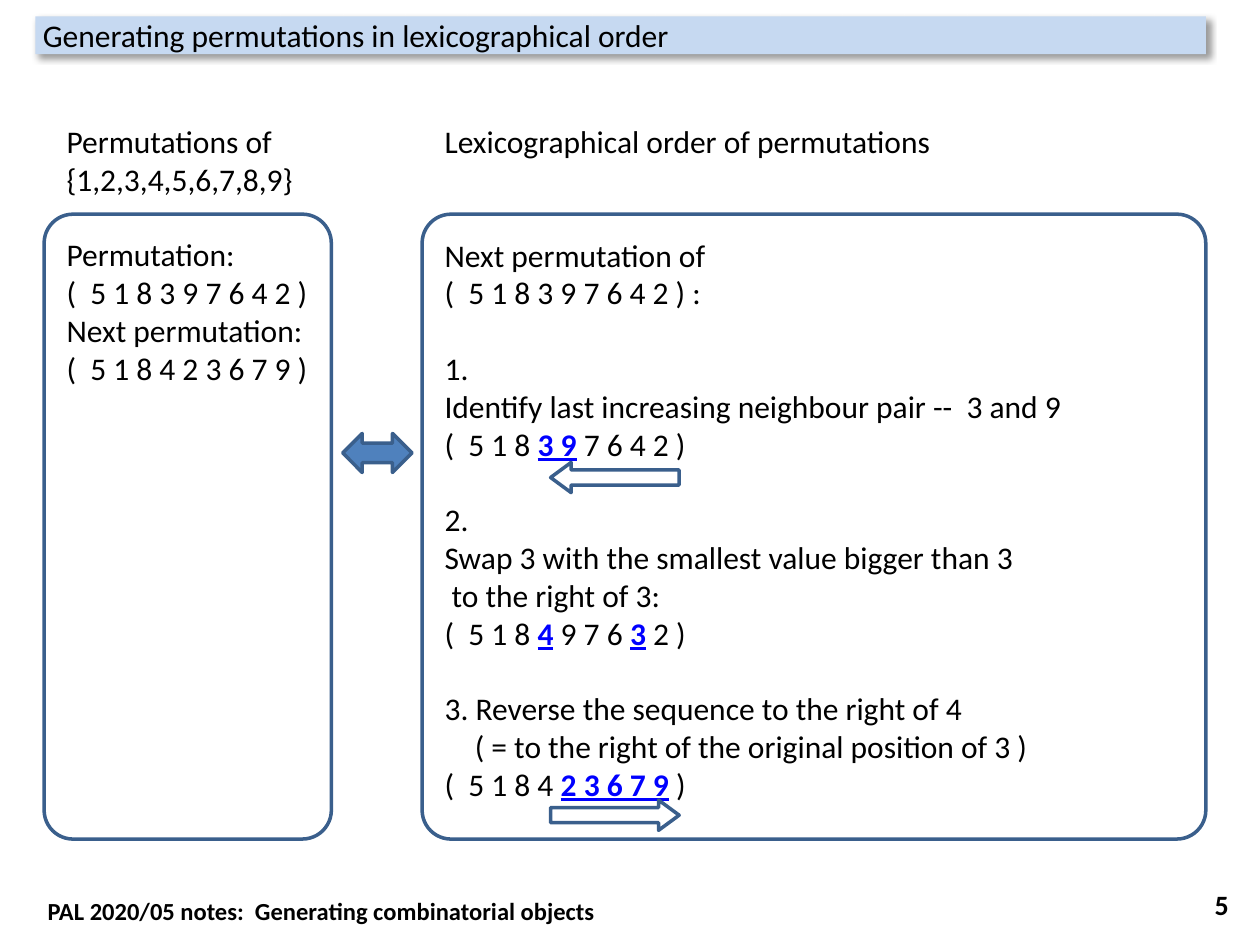
import dataclasses

import pptx
import pptx.dml.color
import pptx.enum.shapes
import pptx.enum.text
import pptx.oxml
import pptx.oxml.ns
import pptx.util

Inches = pptx.util.Inches
Pt = pptx.util.Pt
SHAPE = pptx.enum.shapes.MSO_SHAPE
ALIGN = pptx.enum.text.PP_ALIGN
ANCHOR = pptx.enum.text.MSO_ANCHOR


@dataclasses.dataclass(frozen=True)
class Theme:
    """Colours, font and sizes of the slide."""

    font: str = "Calibri"
    ink: str = "000000"
    mark: str = "0000FF"
    paper: str = "FFFFFF"
    bar: str = "C6D9F1"
    accent: str = "4F81BD"
    outline: str = "3A5F8C"
    body: int = 18
    number: int = 16
    footer: int = 14
    line_pitch: float = 21.6
    border: int = 2


THEME = Theme()


@dataclasses.dataclass(frozen=True)
class Line:
    """One paragraph: marked parts stand between underscores, gap counts lines above."""

    text: str
    gap: int = 0
    indent: float = 0


PERMUTATION_LINES = [
    Line("Permutations of {1,2,3,4,5,6,7,8,9}"),
    Line("Permutation:", gap=1),
    Line("(  5 1 8 3 9 7 6 4 2 )"),
    Line("Next permutation:"),
    Line("(  5 1 8 4 2 3 6 7 9 )"),
]
STEP_LINES = [
    Line("Lexicographical order of permutations"),
    Line("Next permutation of", gap=2),
    Line("(  5 1 8 3 9 7 6 4 2 ) :"),
    Line("1.", gap=1),
    Line("Identify last increasing neighbour pair --  3 and 9"),
    Line("(  5 1 8 _3 9_ 7 6 4 2 )"),
    Line("2.", gap=1),
    Line("Swap 3 with the smallest value bigger than 3"),
    Line(" to the right of 3:"),
    Line("(  5 1 8 _4_ 9 7 6 _3_ 2 )"),
    Line("3. Reverse the sequence to the right of 4", gap=1),
    Line("( = to the right of the original position of 3 )", indent=0.24),
    Line("(  5 1 8 4 _2 3 6 7 9_ )"),
]


def rgb(value):
    """Turn a hex string into a colour."""
    return pptx.dml.color.RGBColor.from_string(value)


def apply(target, values):
    """Set each named attribute on the target."""
    for name, value in values.items():
        setattr(target, name, value)


def write_line(paragraph, line, size, bold=False):
    """Fill a paragraph with the plain and marked runs of a line."""
    if line.gap:
        paragraph.space_before = Pt(line.gap * THEME.line_pitch)
    if line.indent:
        paragraph._p.get_or_add_pPr().set("marL", str(Inches(line.indent)))
    for position, part in enumerate(line.text.split("_")):
        marked = position % 2 == 1
        run = paragraph.add_run()
        run.text = part
        apply(run.font, {"name": THEME.font, "size": Pt(size),
                         "bold": bold or marked, "underline": marked})
        run.font.color.rgb = rgb(THEME.mark if marked else THEME.ink)


def add_text(slide, box, lines, size=THEME.body, bold=False,
             align=ALIGN.LEFT, anchor=ANCHOR.TOP):
    """Place a wrapping text box with the given lines."""
    frame = slide.shapes.add_textbox(*map(Inches, box)).text_frame
    apply(frame, {"word_wrap": True, "vertical_anchor": anchor})
    for position, line in enumerate(lines):
        paragraph = frame.add_paragraph() if position else frame.paragraphs[0]
        paragraph.alignment = align
        write_line(paragraph, line, size, bold)


def add_outlined(slide, kind, box, fill=THEME.paper, adjustments=()):
    """Place a filled preset shape with the common outline."""
    shape = slide.shapes.add_shape(kind, *map(Inches, box))
    shape.shadow.inherit = False
    shape.fill.solid()
    shape.fill.fore_color.rgb = rgb(fill)
    shape.line.color.rgb = rgb(THEME.outline)
    shape.line.width = Pt(THEME.border)
    for position, value in enumerate(adjustments):
        shape.adjustments[position] = value


def add_drop_shadow(shape):
    """Give a shape a soft shadow to the lower right."""
    shape.shadow.inherit = False
    effects = shape._element.spPr.find(pptx.oxml.ns.qn("a:effectLst"))
    effects.append(pptx.oxml.parse_xml(
        f'<a:outerShdw {pptx.oxml.ns.nsdecls("a")} blurRad="{Pt(4)}" dist="{Pt(3)}" '
        f'dir="{45 * 60000}" algn="tl" rotWithShape="0">'
        f'<a:srgbClr val="{THEME.ink}"><a:alpha val="40000"/></a:srgbClr></a:outerShdw>'))


def add_title(slide, box, text):
    """Place the shadowed title bar."""
    bar = slide.shapes.add_shape(SHAPE.RECTANGLE, *map(Inches, box))
    add_drop_shadow(bar)
    bar.fill.solid()
    bar.fill.fore_color.rgb = rgb(THEME.bar)
    bar.line.fill.background()
    frame = bar.text_frame
    apply(frame, {"margin_left": Inches(0.06), "margin_right": 0, "margin_top": 0,
                  "margin_bottom": 0, "word_wrap": True, "vertical_anchor": ANCHOR.MIDDLE})
    frame.paragraphs[0].alignment = ALIGN.LEFT
    write_line(frame.paragraphs[0], Line(text), THEME.body)


def add_panel(slide, box, lines, text_width, text_height):
    """Place a rounded panel and its text, whose heading stands above the panel."""
    left, top, width, height = box
    corner = 0.23 / min(width, height)
    add_outlined(slide, SHAPE.ROUNDED_RECTANGLE, box, adjustments=[corner])
    add_text(slide, (left + 0.08, top - 0.78, text_width, text_height), lines)


def add_arrows(slide, panel):
    """Place the link left of the steps panel and the direction arrows inside it."""
    left, top, _, _ = panel
    add_outlined(slide, SHAPE.LEFT_RIGHT_ARROW, (left - 0.63, top + 1.74, 0.55, 0.31),
                 THEME.accent)
    for kind, drop in ((SHAPE.LEFT_ARROW, 1.97), (SHAPE.RIGHT_ARROW, 4.65)):
        add_outlined(slide, kind, (left + 1.02, top + drop, 1.02, 0.24),
                     adjustments=[0.5, 0.68])


def add_footer(slide, box, note, number):
    """Place the note on the left and the page number on the right of the footer."""
    left, top, width, height = box
    add_text(slide, (left, top + 0.08, 6.06, 0.34), [Line(note)], THEME.footer, bold=True)
    add_text(slide, (left + width - 2.33, top, 2.33, height), [Line(number)],
             THEME.number, bold=True, align=ALIGN.RIGHT, anchor=ANCHOR.MIDDLE)


def main():
    """Build the slide and save it."""
    deck = pptx.Presentation()
    apply(deck, {"slide_width": Inches(10), "slide_height": Inches(7.5)})
    slide = deck.slides.add_slide(deck.slide_layouts[6])
    steps_panel = (3.35, 1.7, 6.22, 4.96)
    add_title(slide, (0.28, 0.13, 9.29, 0.3),
              "Generating permutations in lexicographical order")
    add_panel(slide, (0.35, 1.7, 2.28, 4.96), PERMUTATION_LINES, 2.68, 4.04)
    add_panel(slide, steps_panel, STEP_LINES, 5.91, 5.55)
    add_arrows(slide, steps_panel)
    add_footer(slide, (0.28, 6.98, 9.57, 0.4),
               "PAL 2020/05 notes:  Generating combinatorial objects", "5")
    deck.save("out.pptx")


if __name__ == "__main__":
    main()
